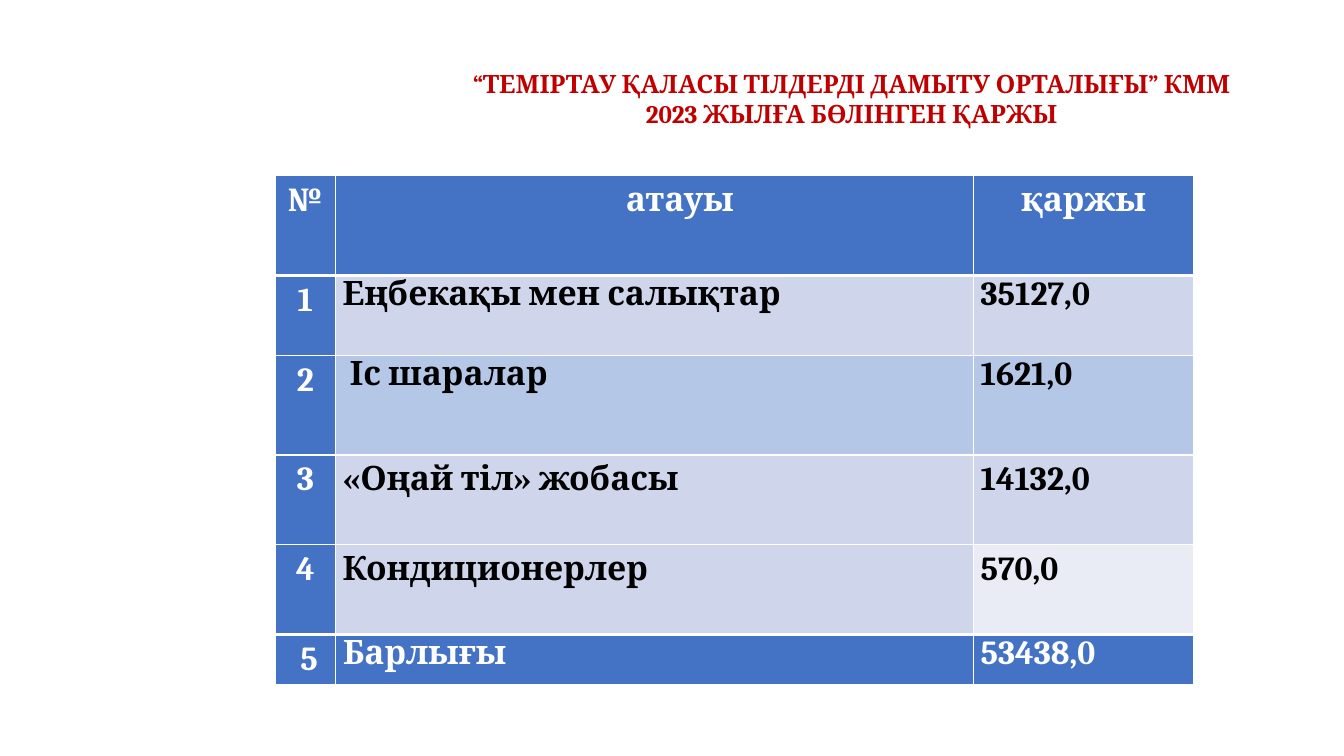
from lxml.etree import SubElement
from pptx import Presentation
from pptx.dml.color import RGBColor
from pptx.enum.text import MSO_AUTO_SIZE as AutoSize, PP_ALIGN as Align
from pptx.oxml.ns import qn
from pptx.util import Pt

TITLE = ["“ТЕМІРТАУ ҚАЛАСЫ ТІЛДЕРДІ ДАМЫТУ ОРТАЛЫҒЫ” КММ", "2023 ЖЫЛҒА БӨЛІНГЕН ҚАРЖЫ"]
BLUE, PALE, SKY, MIST = "4472C4", "CFD5EA", "B4C7E7", "E9EBF5"
WHITE, BLACK, RED = "FFFFFF", "000000", "C00000"
ROWS = [
    (71.3, 1.15, (BLUE, BLUE), ("№", "атауы", "қаржы")),
    (56.9, 1, (PALE, PALE), ("1", "Еңбекақы мен салықтар", "35127,0")),
    (71.3, 1, (SKY, SKY), ("2", "Іс шаралар", "1621,0")),
    (64.1, 1.15, (PALE, PALE), ("3", "«Оңай тіл» жобасы", "14132,0")),
    (64.1, 1.15, (PALE, MIST), ("4", "Кондиционерлер", "570,0")),
    (36, 1, (BLUE, BLUE), ("5", "Барлығы", "53438,0")),
]
COLUMN_WIDTHS = [43.2, 455.8, 157]
INDENTS = {(0, 1): 36, (2, 1): 5.3, (5, 0): 5.3}
LAST = len(ROWS) - 1


def colour(value):
    return RGBColor.from_string(value)


def add_span(para, text, size, ink):
    span = para.add_run()
    span.text = text
    span.font.name = "Cambria"
    span.font.size = Pt(size)
    span.font.bold = True
    span.font.color.rgb = colour(ink)


def add_borders(cell, row):
    widths = {
        "a:lnL": 1,
        "a:lnR": 1,
        "a:lnT": 3 if row in (1, LAST) else 1,
        "a:lnB": 3 if row in (0, LAST - 1) else 1,
    }
    properties = cell._tc.get_or_add_tcPr()
    for tag, width in widths.items():
        line = SubElement(properties, qn(tag), w=str(Pt(width)))
        fill = SubElement(line, qn("a:solidFill"))
        SubElement(fill, qn("a:srgbClr"), val=WHITE)


def fill_cell(cell, row, column, text, fill, spacing):
    add_borders(cell, row)
    cell.fill.solid()
    cell.fill.fore_color.rgb = colour(fill)
    cell.margin_left = cell.margin_right = Pt(5)
    cell.margin_top = cell.margin_bottom = 0
    para = cell.text_frame.paragraphs[0]
    para.alignment = Align.CENTER if row == 0 or column == 0 else Align.LEFT
    para.line_spacing = spacing
    if (row, column) in INDENTS:
        para._p.get_or_add_pPr().set("marL", str(Pt(INDENTS[row, column])))
    add_span(para, text, 24, WHITE if fill == BLUE else BLACK)


deck = Presentation()
deck.slide_width, deck.slide_height = Pt(960), Pt(540)
page = deck.slides.add_slide(deck.slide_layouts[6])

heights = [row[0] for row in ROWS]
budget = page.shapes.add_table(
    len(ROWS), len(COLUMN_WIDTHS), Pt(196.5), Pt(125.5), Pt(sum(COLUMN_WIDTHS)), Pt(sum(heights))
).table
for column, width in enumerate(COLUMN_WIDTHS):
    budget.columns[column].width = Pt(width)
for row, (height, spacing, fills, texts) in enumerate(ROWS):
    budget.rows[row].height = Pt(height)
    for column, (text, fill) in enumerate(zip(texts, (BLUE, *fills))):
        fill_cell(budget.cell(row, column), row, column, text, fill, spacing if column else 1.15)

box = page.shapes.add_textbox(Pt(321), Pt(45.4), Pt(574.6), Pt(51))
box.text_frame.word_wrap = True
box.text_frame.auto_size = AutoSize.SHAPE_TO_FIT_TEXT
para = box.text_frame.paragraphs[0]
para.alignment = Align.CENTER
for index, text in enumerate(TITLE):
    if index:
        para.add_line_break()
    add_span(para, text, 18, RED)

deck.save("out.pptx")
